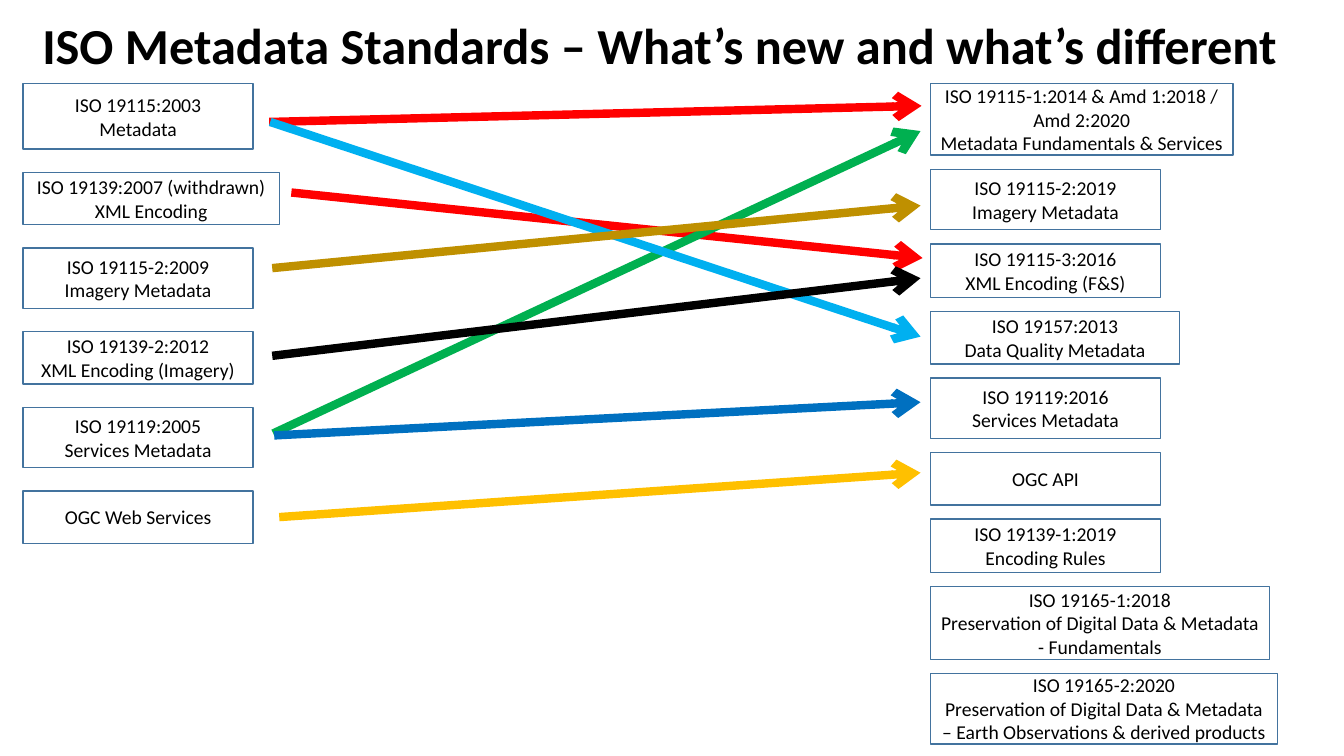
from dataclasses import dataclass

import pptx
import pptx.dml.color
import pptx.enum.shapes
import pptx.enum.text
import pptx.oxml.ns
import pptx.presentation
import pptx.slide
import pptx.text.text
import pptx.util
from lxml import etree

EMU_PER_PX = 9144
FONT = "Calibri"
COLORS = {
    "text": "000000",
    "outline": "43739E",
    "red": "FF0000",
    "green": "00B050",
    "blue": "0070C0",
    "sky": "00B0F0",
    "amber": "FFC000",
    "black": "000000",
    "bronze": "BF9000",
}


@dataclass(frozen=True)
class Standard:
    lines: tuple[str, ...]
    width: int
    height: int


@dataclass(frozen=True)
class Column:
    left: int
    top: int
    gap: int
    standards: tuple[Standard, ...]


@dataclass(frozen=True)
class Arrow:
    start: tuple[int, int]
    end: tuple[int, int]
    color: str


OLD_STANDARDS = Column(23, 83, 23, (
    Standard(("ISO 19115:2003", "Metadata"), 228, 65),
    Standard(("ISO 19139:2007 (withdrawn)", "XML Encoding"), 254, 52),
    Standard(("ISO 19115-2:2009", "Imagery Metadata"), 228, 60),
    Standard(("ISO 19139-2:2012", "XML Encoding (Imagery)"), 228, 52),
    Standard(("ISO 19119:2005", "Services Metadata"), 228, 60),
    Standard(("OGC Web Services",), 228, 52),
))
NEW_STANDARDS = Column(923, 83, 14, (
    Standard(("ISO 19115-1:2014 & Amd 1:2018 / Amd 2:2020",
              "Metadata Fundamentals & Services"), 300, 71),
    Standard(("ISO 19115-2:2019", "Imagery Metadata"), 228, 60),
    Standard(("ISO 19115-3:2016", "XML Encoding (F&S)"), 228, 53),
    Standard(("ISO 19157:2013", "Data Quality Metadata"), 247, 52),
    Standard(("ISO 19119:2016", "Services Metadata"), 228, 60),
    Standard(("OGC API",), 228, 52),
    Standard(("ISO 19139-1:2019", "Encoding Rules"), 228, 53),
    Standard(("ISO 19165-1:2018",
              "Preservation of Digital Data & Metadata - Fundamentals"), 336, 72),
    Standard(("ISO 19165-2:2020",
              "Preservation of Digital Data & Metadata – Earth Observations & derived products"),
             344, 70),
))
ARROWS = (
    Arrow((267, 121), (914, 105), "red"),
    Arrow((289, 191), (915, 256), "red"),
    Arrow((271, 430), (913, 130), "green"),
    Arrow((272, 432), (913, 399), "blue"),
    Arrow((268, 121), (913, 334), "sky"),
    Arrow((277, 513), (913, 469), "amber"),
    Arrow((270, 353), (913, 276), "black"),
    Arrow((270, 266), (913, 204), "bronze"),
)


def px(length: int) -> pptx.util.Emu:
    return pptx.util.Emu(length * EMU_PER_PX)


def rgb(name: str) -> pptx.dml.color.RGBColor:
    return pptx.dml.color.RGBColor.from_string(COLORS[name])


def write_lines(frame: pptx.text.text.TextFrame, lines: tuple[str, ...],
                size: int, bold: bool = False) -> None:
    frame.word_wrap = True
    for index, line in enumerate(lines):
        paragraph = frame.add_paragraph() if index else frame.paragraphs[0]
        paragraph.text = line
        paragraph.alignment = pptx.enum.text.PP_ALIGN.CENTER
        paragraph.font.name = FONT
        paragraph.font.size = pptx.util.Pt(size)
        paragraph.font.bold = bold
        paragraph.font.color.rgb = rgb("text")


def draw_title(slide: pptx.slide.Slide, title: str) -> None:
    frame = slide.shapes.add_textbox(px(5), px(-4), px(1299), px(84)).text_frame
    write_lines(frame, (title,), 36, bold=True)
    frame.vertical_anchor = pptx.enum.text.MSO_ANCHOR.BOTTOM
    frame.paragraphs[0].line_spacing = 0.9


def draw_column(slide: pptx.slide.Slide, column: Column) -> None:
    top = column.top
    for standard in column.standards:
        shape = slide.shapes.add_shape(
            pptx.enum.shapes.MSO_SHAPE.RECTANGLE,
            px(column.left), px(top), px(standard.width), px(standard.height))
        shape.shadow.inherit = False
        shape.fill.background()
        shape.line.color.rgb = rgb("outline")
        shape.line.width = pptx.util.Pt(1)
        shape.text_frame.vertical_anchor = pptx.enum.text.MSO_ANCHOR.MIDDLE
        write_lines(shape.text_frame, standard.lines, 14)
        top += standard.height + column.gap


def draw_arrow(slide: pptx.slide.Slide, arrow: Arrow) -> None:
    connector = slide.shapes.add_connector(
        pptx.enum.shapes.MSO_CONNECTOR.STRAIGHT,
        *map(px, arrow.start), *map(px, arrow.end))
    connector.line.color.rgb = rgb(arrow.color)
    connector.line.width = pptx.util.Pt(6)
    line = connector.line._get_or_add_ln()
    etree.SubElement(line, pptx.oxml.ns.qn("a:tailEnd"), type="arrow")
    etree.SubElement(connector._element.spPr, pptx.oxml.ns.qn("a:effectLst"))


def main() -> None:
    presentation = pptx.Presentation()
    presentation.slide_width = px(1333)
    presentation.slide_height = px(750)
    slide = presentation.slides.add_slide(presentation.slide_layouts[6])
    draw_title(slide, "ISO Metadata Standards – What’s new and what’s different")
    for column in (OLD_STANDARDS, NEW_STANDARDS):
        draw_column(slide, column)
    for arrow in ARROWS:
        draw_arrow(slide, arrow)
    presentation.save("out.pptx")


if __name__ == "__main__":
    main()
